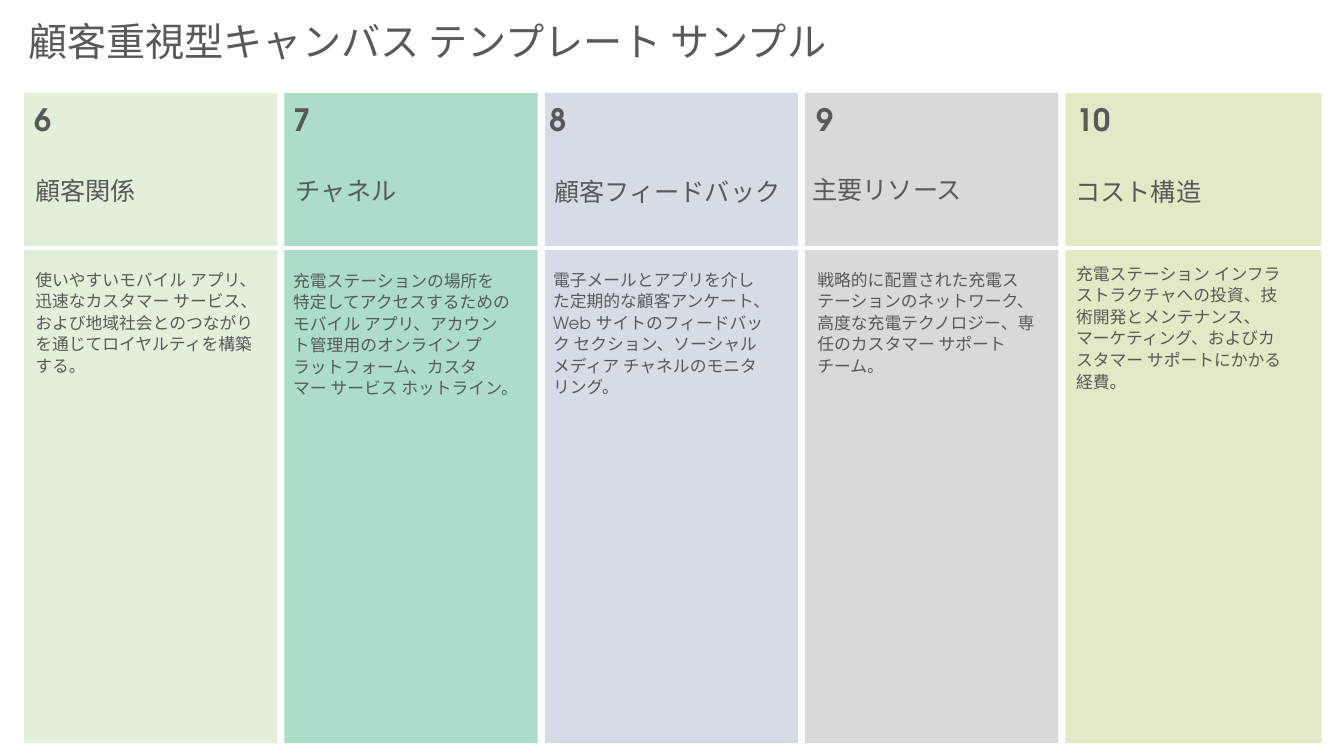
from collections import namedtuple
from dataclasses import dataclass

from lxml.etree import SubElement
from pptx import Presentation
from pptx.dml.color import RGBColor
from pptx.enum.shapes import MSO_CONNECTOR as CONN, MSO_SHAPE as SHAPE
from pptx.enum.text import MSO_AUTO_SIZE as AUTO
from pptx.oxml.ns import qn
from pptx.util import Cm, Pt


@dataclass(frozen=True)
class Theme:
    font: str = "TeX Gyre Adventor"
    ink: str = "595959"
    rule: str = "FFFFFF"
    fills: tuple = ("E2F0D9", "ABDDC9", "D6DCE5", "D9D9D9", "E1E9C5")
    title: int = 28
    number: int = 22
    heading: int = 18
    body: int = 12


theme = Theme()
PANEL_LEFT, PANEL_TOP, PANEL_PITCH = 0.61, 2.34, 6.56
PANEL_WIDTH, PANEL_HEIGHT = 6.38, 16.39
SPACED = {"line_spacing": 1.07, "space_after": Pt(8)}

# Each box is left, top, width, height in centimetres.
Column = namedtuple("Column", "number number_box heading heading_box body body_box")
columns = [
    Column("6", (0.61, 2.36, 1.17, 1.63),
           "顧客関係", (0.64, 4.29, 6.35, 1.02),
           "使いやすいモバイル アプリ、迅速なカスタマー サービス、および地域社会との"
           "つながりを通じてロイヤルティを構築する。", (0.64, 6.63, 6.05, 3.99)),
    Column("7", (7.16, 2.36, 1.17, 1.63),
           "チャネル", (7.21, 4.29, 6.35, 1.02),
           "充電ステーションの場所を特定してアクセスするためのモバイル アプリ、"
           "アカウント管理用のオンライン プラットフォーム、カスタマー サービス ホットライン。",
           (7.14, 6.65, 5.97, 3.99)),
    Column("8", (13.61, 2.34, 1.17, 1.63),
           "顧客フィードバック", (13.72, 4.32, 6.35, 1.02),
           "電子メールとアプリを介した定期的な顧客アンケート、Web サイトの"
           "フィードバック セクション、ソーシャル メディア チャネルのモニタリング。",
           (13.69, 6.63, 5.97, 3.99)),
    Column("9", (20.32, 2.34, 1.17, 1.63),
           "主要リソース", (20.22, 4.27, 6.35, 1.02),
           "戦略的に配置された充電ステーションのネットワーク、高度な充電テクノロジー、"
           "専任のカスタマー サポート チーム。", (20.35, 6.63, 6.05, 3.99)),
    Column("10", (26.87, 2.34, 1.52, 1.63),
           "コスト構造", (26.85, 4.32, 6.22, 1.02),
           "充電ステーション インフラストラクチャへの投資、技術開発とメンテナンス、"
           "マーケティング、およびカスタマー サポートにかかる経費。",
           (26.87, 6.48, 5.72, 5.18)),
]

prs = Presentation()
prs.slide_width, prs.slide_height = Cm(33.87), Cm(19.05)
s = prs.slides.add_slide(prs.slide_layouts[6])


def add_text(text, box, size, bold=False, spacing=None):
    """Add a one-paragraph box; without spacing it grows to fit its text."""
    tf = s.shapes.add_textbox(*map(Cm, box)).text_frame
    tf.word_wrap = True
    tf.auto_size = AUTO.NONE if spacing else AUTO.SHAPE_TO_FIT_TEXT
    p = tf.paragraphs[0]
    for name, value in (spacing or {}).items():
        setattr(p, name, value)
    r = p.add_run()
    r.text = text
    for name, value in {"name": theme.font, "size": Pt(size), "bold": bold}.items():
        setattr(r.font, name, value)
    r.font.color.rgb = RGBColor.from_string(theme.ink)


# Column panels
for i, fill in enumerate(theme.fills):
    width = 6.45 if i == len(theme.fills) - 1 else PANEL_WIDTH
    box = (PANEL_LEFT + i * PANEL_PITCH, PANEL_TOP, width, PANEL_HEIGHT)
    sp = s.shapes.add_shape(SHAPE.RECTANGLE, *map(Cm, box))
    sp.shadow.inherit = False
    sp.fill.solid()
    sp.fill.fore_color.rgb = RGBColor.from_string(fill)
    sp.line.fill.background()

# Rule between headings and bodies
rule = s.shapes.add_connector(CONN.STRAIGHT, Cm(0.61), Cm(6.25), Cm(33.53), Cm(6.25))
rule.line.color.rgb = RGBColor.from_string(theme.rule)
rule.line.width = Pt(2.25)
SubElement(rule._element.spPr, qn("a:effectLst"))

# Text
add_text("顧客重視型キャンバス テンプレート サンプル", (0.46, 0.3, 32.89, 1.45), theme.title)
for c in columns:
    add_text(c.number, c.number_box, theme.number, bold=True, spacing=SPACED)
    add_text(c.heading, c.heading_box, theme.heading)
    add_text(c.body, c.body_box, theme.body, spacing=SPACED)

prs.save("out.pptx")
